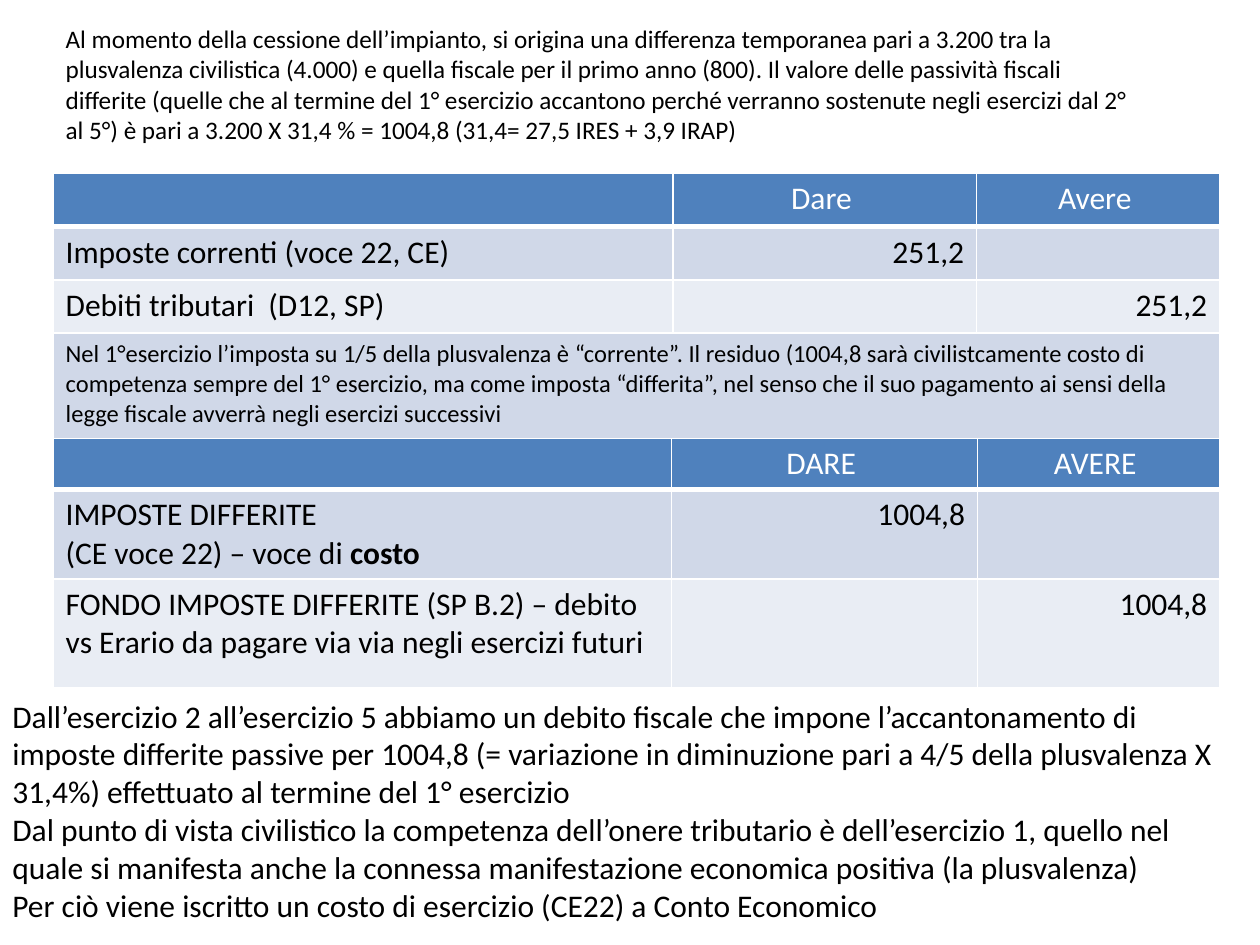
from lxml import etree
from pptx import Presentation
from pptx.dml.color import RGBColor
from pptx.enum import shapes, text
from pptx.oxml import ns
from pptx.util import Cm, Pt

COLORS = {"white": "FFFFFF", "black": "000000", "header": "4F81BD",
          "band": "D0D8E8", "light": "E9EDF4"}
LEFT, CENTER, RIGHT = text.PP_ALIGN.LEFT, text.PP_ALIGN.CENTER, text.PP_ALIGN.RIGHT

TITLE = (
    "Al momento della cessione dell’impianto, si origina una differenza temporanea "
    "pari a 3.200 tra la plusvalenza civilistica (4.000) e quella fiscale per il primo "
    "anno (800). Il valore delle passività fiscali differite (quelle che al termine del "
    "1° esercizio accantono perché verranno sostenute negli esercizi dal 2° al 5°) è "
    "pari a 3.200 X 31,4 % = 1004,8 (31,4= 27,5 IRES + 3,9 IRAP)")
NOTE = (
    "Nel 1°esercizio l’imposta su 1/5 della plusvalenza è “corrente”. Il residuo (1004,8 "
    "sarà civilistcamente costo di competenza sempre del 1° esercizio, ma come imposta "
    "“differita”, nel senso che il suo pagamento ai sensi della legge fiscale avverrà "
    "negli esercizi successivi")
CONCLUSION = [
    "Dall’esercizio 2 all’esercizio 5 abbiamo un debito fiscale che impone "
    "l’accantonamento di imposte differite passive per 1004,8 (= variazione in "
    "diminuzione pari a 4/5 della plusvalenza X 31,4%) effettuato al termine del 1° "
    "esercizio",
    "Dal punto di vista civilistico la competenza dell’onere tributario è "
    "dell’esercizio 1, quello nel quale si manifesta anche la connessa manifestazione "
    "economica positiva (la plusvalenza)",
    "Per ciò viene iscritto un costo di esercizio (CE22) a Conto Economico"]
CURRENT_TAXES = [
    ["", "Dare ", "Avere "],
    ["Imposte correnti (voce 22, CE)", "251,2", ""],
    ["Debiti tributari  (D12, SP)", "", "251,2"],
    [NOTE]]
DEFERRED_TAXES = [
    ["", "DARE ", "AVERE "],
    ["IMPOSTE DIFFERITE\n(CE voce 22) – voce di **costo**", "1004,8", ""],
    ["FONDO IMPOSTE DIFFERITE (SP B.2) – debito vs Erario da pagare via via negli "
     "esercizi futuri", "", "1004,8"]]


class SlideBuilder:
    font = "Calibri"
    body_size = 18

    def __init__(self, deck):
        self.page = deck.slides.add_slide(deck.slide_layouts[5])

    def color(self, name):
        return RGBColor.from_string(COLORS[name])

    def paint(self, fill, name):
        fill.solid()
        fill.fore_color.rgb = self.color(name)

    def add_text(self, frame, paragraphs, size=body_size, color="black", align=LEFT):
        """Fill a text frame; text between ** marks is bold."""
        for index, content in enumerate(paragraphs):
            para = frame.add_paragraph() if index else frame.paragraphs[0]
            para.alignment = align
            para.font.size = Pt(size)
            for part, words in enumerate(content.split("**")):
                if words:
                    span = para.add_run()
                    span.text = words
                    span.font.name = self.font
                    span.font.size = Pt(size)
                    span.font.bold = part % 2 == 1
                    span.font.color.rgb = self.color(color)

    def panel(self, box, paragraphs, size, anchor):
        """Make a shape a white, white-edged panel of left-aligned text."""
        self.paint(box.fill, "white")
        box.line.color.rgb = self.color("white")
        box.line.width = Pt(2)
        frame = box.text_frame
        frame.word_wrap = True
        frame.auto_size = text.MSO_AUTO_SIZE.NONE
        frame.vertical_anchor = anchor
        self.add_text(frame, paragraphs, size)

    def title(self, left, top, width, height, content, size):
        box = self.page.shapes.title
        box.left, box.top, box.width, box.height = map(Cm, (left, top, width, height))
        self.panel(box, [content], size, text.MSO_ANCHOR.MIDDLE)

    def text_panel(self, left, top, width, height, paragraphs):
        box = self.page.shapes.add_shape(
            shapes.MSO_SHAPE.RECTANGLE, *map(Cm, (left, top, width, height)))
        box.shadow.inherit = False
        self.panel(box, paragraphs, self.body_size, text.MSO_ANCHOR.TOP)

    def borders(self, cell, bottom):
        properties = cell._tc.get_or_add_tcPr()
        for side, width in zip("LRTB", (1, 1, 1, bottom)):
            line = etree.SubElement(properties, ns.qn(f"a:ln{side}"), w=str(Pt(width)))
            fill = etree.SubElement(line, ns.qn("a:solidFill"))
            etree.SubElement(fill, ns.qn("a:srgbClr"), val=COLORS["white"])

    def ledger(self, left, top, widths, heights, rows):
        """Table with a header row; a row of one text spans all the columns."""
        table = self.page.shapes.add_table(
            len(rows), len(widths),
            *map(Cm, (left, top, sum(widths), sum(heights)))).table
        for column, width in zip(table.columns, widths):
            column.width = Cm(width)
        for r, (content, height) in enumerate(zip(rows, heights)):
            table.rows[r].height = Cm(height)
            spanning = len(content) == 1
            if spanning:
                table.cell(r, 0).merge(table.cell(r, len(widths) - 1))
            fill = "header" if r == 0 else "band" if r % 2 else "light"
            for c in range(len(widths)):
                cell = table.cell(r, c)
                self.borders(cell, 1 if r else 3)
                self.paint(cell.fill, fill)
                if c < len(content):
                    align = LEFT if c == 0 else RIGHT if r else CENTER
                    self.add_text(cell.text_frame, content[c].split("\n"),
                                  14 if spanning else self.body_size,
                                  "black" if r else "white", align)


def main():
    deck = Presentation()
    deck.slide_width, deck.slide_height = Cm(25.4), Cm(19.05)
    slide = SlideBuilder(deck)
    slide.title(1.07, 0.1, 22.17, 3.18, TITLE, 14.4)
    slide.ledger(1.07, 8.84, [12.47, 6.17, 4.88], [0.89, 1.52, 2.18], DEFERRED_TAXES)
    slide.text_panel(0, 13.92, 25.4, 4.88, CONCLUSION)
    slide.ledger(1.07, 3.5, [12.5, 6.12, 4.9], [1.07, 1.07, 1.07, 2.13], CURRENT_TAXES)
    deck.save("out.pptx")


if __name__ == "__main__":
    main()
